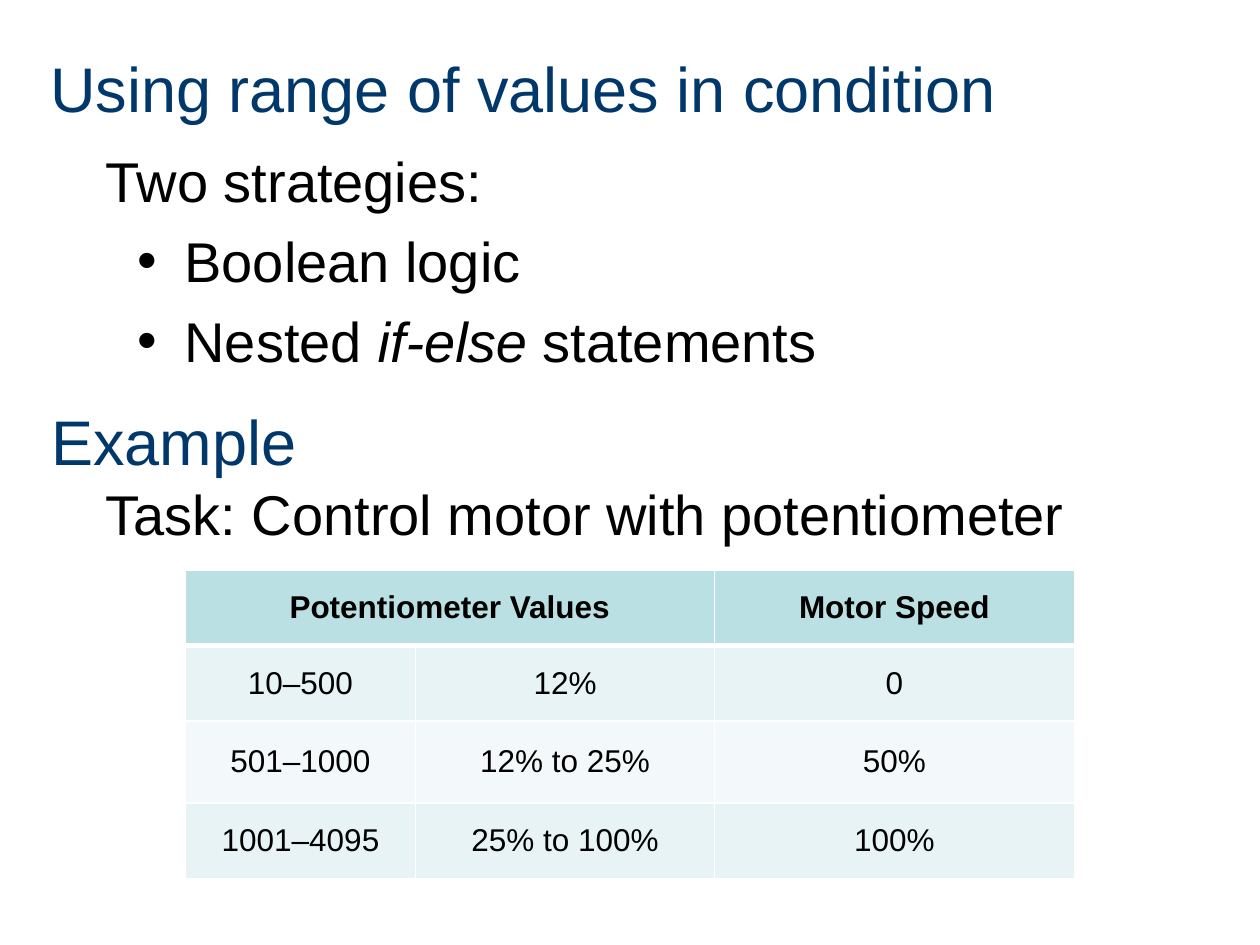
from lxml import etree
from pptx import Presentation
from pptx.dml.color import RGBColor
from pptx.enum.text import MSO_ANCHOR, PP_ALIGN
from pptx.oxml.ns import qn
from pptx.util import Pt

TOP, MID = MSO_ANCHOR.TOP, MSO_ANCHOR.MIDDLE
CENTER = PP_ALIGN.CENTER

NAVY = RGBColor(0x00, 0x38, 0x6B)
BLACK = RGBColor(0x00, 0x00, 0x00)
WHITE = RGBColor(0xFF, 0xFF, 0xFF)
TEAL = RGBColor(0xBB, 0xE0, 0xE3)
PALE = RGBColor(0xE7, 0xF3, 0xF4)
FAINT = RGBColor(0xF3, 0xF9, 0xFA)

HEAD = {"name": "Arial", "size": Pt(36), "color": NAVY}
BODY = {"name": "Arial", "size": Pt(32), "color": BLACK}
CELL = {"name": "Arial", "size": Pt(18), "color": BLACK}

POINTS = [
    (False, [("Two strategies:", False)]),
    (True, [("Boolean logic", False)]),
    (True, [("Nested", False), (" if-else", True), (" statements", False)]),
]
ROWS = [
    ["Potentiometer Values", "", "Motor Speed"],
    ["10–500", "12%", "0"],
    ["501–1000", "12% to 25%", "50%"],
    ["1001–4095", "25% to 100%", "100%"],
]
FILLS = [TEAL, PALE, FAINT, PALE]
WIDTHS = [131.8, 170.6, 205.9]
HEIGHTS = [43.2, 43.2, 46.8, 43.2]


def add_run(para, text, style, **extra):
    run = para.add_run()
    run.text = text
    for key, value in {**style, **extra}.items():
        if key == "color":
            run.font.color.rgb = value
        else:
            setattr(run.font, key, value)


def add_frame(slide, box, anchor):
    frame = slide.shapes.add_textbox(*map(Pt, box)).text_frame
    frame.word_wrap = True
    frame.vertical_anchor = anchor
    return frame


def add_line(slide, box, text, style, anchor):
    """Place one line of text in the box."""
    frame = add_frame(slide, box, anchor)
    add_run(frame.paragraphs[0], text, style)


def add_bullet(para):
    props = para._p.get_or_add_pPr()
    props.set("marL", str(Pt(45)))
    props.set("indent", str(-Pt(27)))
    etree.SubElement(props, qn("a:buFont"), typeface="Arial")
    etree.SubElement(props, qn("a:buChar"), char="•")


def add_points(slide, box):
    frame = add_frame(slide, box, TOP)
    for i, (bullet, runs) in enumerate(POINTS):
        para = frame.add_paragraph() if i else frame.paragraphs[0]
        para.space_before = Pt(7.5)
        if bullet:
            add_bullet(para)
        for text, italic in runs:
            add_run(para, text, BODY, italic=italic)


def add_borders(cell, top, bottom):
    """Draw white edges, which must come before the fill in the XML."""
    props = cell._tc.get_or_add_tcPr()
    edges = {"a:lnL": 1, "a:lnR": 1, "a:lnT": top, "a:lnB": bottom}
    for tag, width in edges.items():
        line = etree.SubElement(props, qn(tag), w=str(Pt(width)))
        fill = etree.SubElement(line, qn("a:solidFill"))
        etree.SubElement(fill, qn("a:srgbClr"), val=str(WHITE))


def add_speeds(slide, box):
    """Place the table of motor speeds."""
    shape = slide.shapes.add_table(len(ROWS), len(WIDTHS), *map(Pt, box))
    table = shape.table
    for col, width in zip(table.columns, WIDTHS):
        col.width = Pt(width)
    for row, height in zip(table.rows, HEIGHTS):
        row.height = Pt(height)
    table.cell(0, 0).merge(table.cell(0, 1))
    for r, texts in enumerate(ROWS):
        for c, text in enumerate(texts):
            cell = table.cell(r, c)
            add_borders(cell, 3 if r == 1 else 1, 3 if r == 0 else 1)
            cell.fill.solid()
            cell.fill.fore_color.rgb = FILLS[r]
            cell.vertical_anchor = MID
            if text:
                para = cell.text_frame.paragraphs[0]
                para.alignment = CENTER
                add_run(para, text, CELL, bold=r == 0)


def main():
    deck = Presentation()
    deck.slide_width, deck.slide_height = Pt(720), Pt(540)
    slide = deck.slides.add_slide(deck.slide_layouts[6])
    add_line(slide, (21.6, 21.6, 684, 56.2),
             "Using range of values in condition", HEAD, MID)
    add_points(slide, (53.3, 79.9, 617.8, 162))
    add_line(slide, (53.3, 270.7, 659.5, 46.1),
             "Task: Control motor with potentiometer", BODY, TOP)
    add_line(slide, (22.3, 223.2, 684, 56.2), "Example", HEAD, MID)
    add_speeds(slide, (105.8, 325.6, sum(WIDTHS), sum(HEIGHTS)))
    deck.save("out.pptx")


if __name__ == "__main__":
    main()
